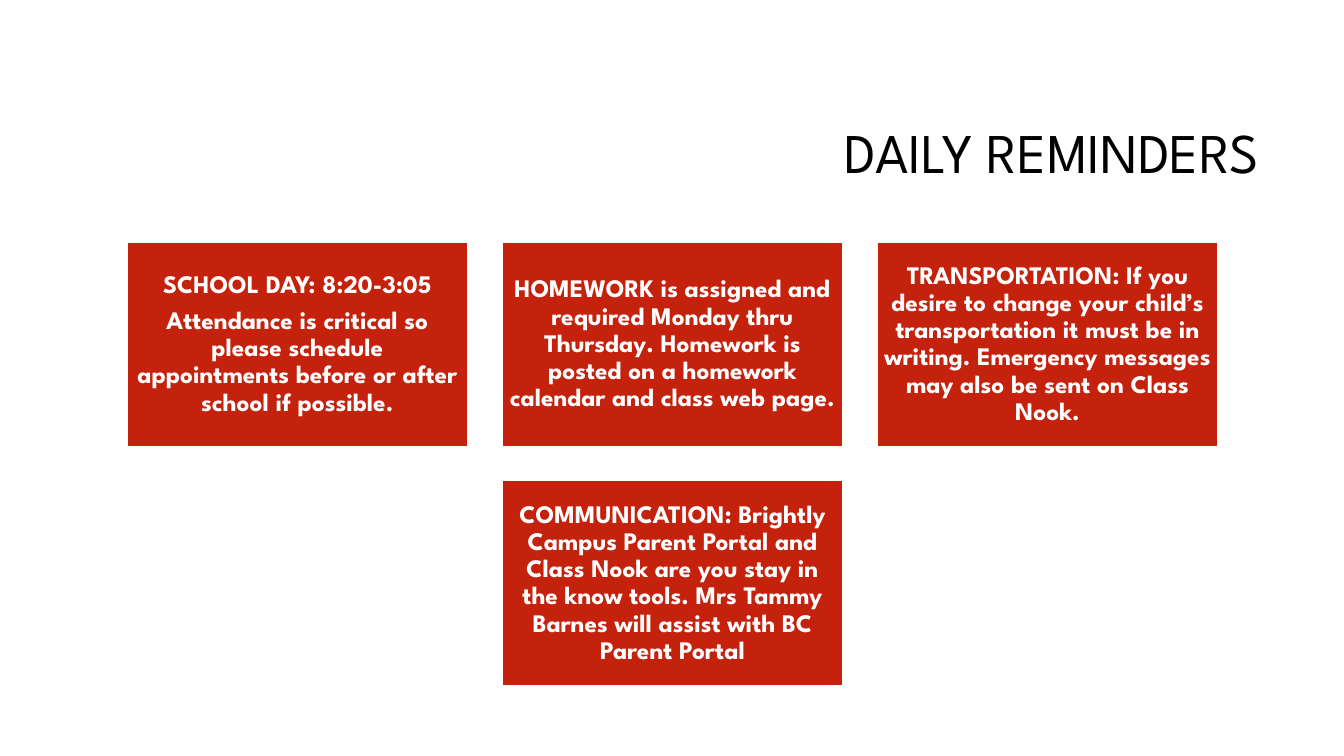
from pptx import Presentation
from pptx.dml.color import RGBColor
from pptx.enum.shapes import MSO_SHAPE
from pptx.enum.text import MSO_ANCHOR, PP_ALIGN
from pptx.util import Inches, Pt

RED = RGBColor(0xC4, 0x22, 0x0D)
WHITE = RGBColor(0xFF, 0xFF, 0xFF)
BLACK = RGBColor(0x00, 0x00, 0x00)
FONT = "League Spartan"

CARD_WIDTH, CARD_HEIGHT, GAP = 3.38, 2.03, 0.34
GRID_LEFT, GRID_TOP = 1.26, 2.4

# Column, row and paragraphs of each card
REMINDERS = [
    (0, 0, ["SCHOOL DAY: 8:20-3:05",
            "Attendance is critical so please schedule appointments before "
            "or after school if possible."]),
    (1, 0, ["HOMEWORK is assigned and required Monday thru Thursday. "
            "Homework is posted on a homework calendar and class web page."]),
    (2, 0, ["TRANSPORTATION: If you desire to change your child’s "
            "transportation it must be in writing. Emergency messages may "
            "also be sent on Class Nook."]),
    (1, 1, ["COMMUNICATION: Brightly Campus Parent Portal and Class Nook "
            "are you stay in the know tools. Mrs Tammy Barnes will assist "
            "with BC Parent Portal"]),
]


def add_span(para, text, size, color, bold=False):
    span = para.add_run()
    span.text = text
    span.font.name = FONT
    span.font.size = Pt(size)
    span.font.bold = bold
    span.font.color.rgb = color


def set_title(page, text):
    title = page.shapes.title
    title.left, title.top = Inches(3.17), Inches(0.84)
    title.width, title.height = Inches(9.42), Inches(1.41)
    title.text_frame.vertical_anchor = MSO_ANCHOR.MIDDLE
    para = title.text_frame.paragraphs[0]
    para.alignment = PP_ALIGN.RIGHT
    para.line_spacing = 0.9
    add_span(para, text, 40, BLACK)


def add_card(page, column, row, texts):
    card = page.shapes.add_shape(
        MSO_SHAPE.RECTANGLE,
        Inches(GRID_LEFT + column * (CARD_WIDTH + GAP)),
        Inches(GRID_TOP + row * (CARD_HEIGHT + GAP)),
        Inches(CARD_WIDTH), Inches(CARD_HEIGHT))
    card.shadow.inherit = False
    card.fill.solid()
    card.fill.fore_color.rgb = RED
    card.line.color.rgb = WHITE
    card.line.width = Pt(1)

    frame = card.text_frame
    frame.word_wrap = True
    frame.vertical_anchor = MSO_ANCHOR.MIDDLE
    frame.margin_left = frame.margin_right = Inches(0.07)
    frame.margin_top = frame.margin_bottom = Inches(0.07)
    for index, text in enumerate(texts):
        para = frame.add_paragraph() if index else frame.paragraphs[0]
        para.alignment = PP_ALIGN.CENTER
        para.line_spacing = 0.9
        para.space_after = Pt(6.3)
        add_span(para, text, 18, WHITE, bold=True)


def main():
    deck = Presentation()
    deck.slide_width, deck.slide_height = Inches(13.33), Inches(7.5)
    page = deck.slides.add_slide(deck.slide_layouts.get_by_name("Title Only"))
    set_title(page, "DAILY REMINDERS")
    for column, row, texts in REMINDERS:
        add_card(page, column, row, texts)
    deck.save("out.pptx")


if __name__ == "__main__":
    main()
